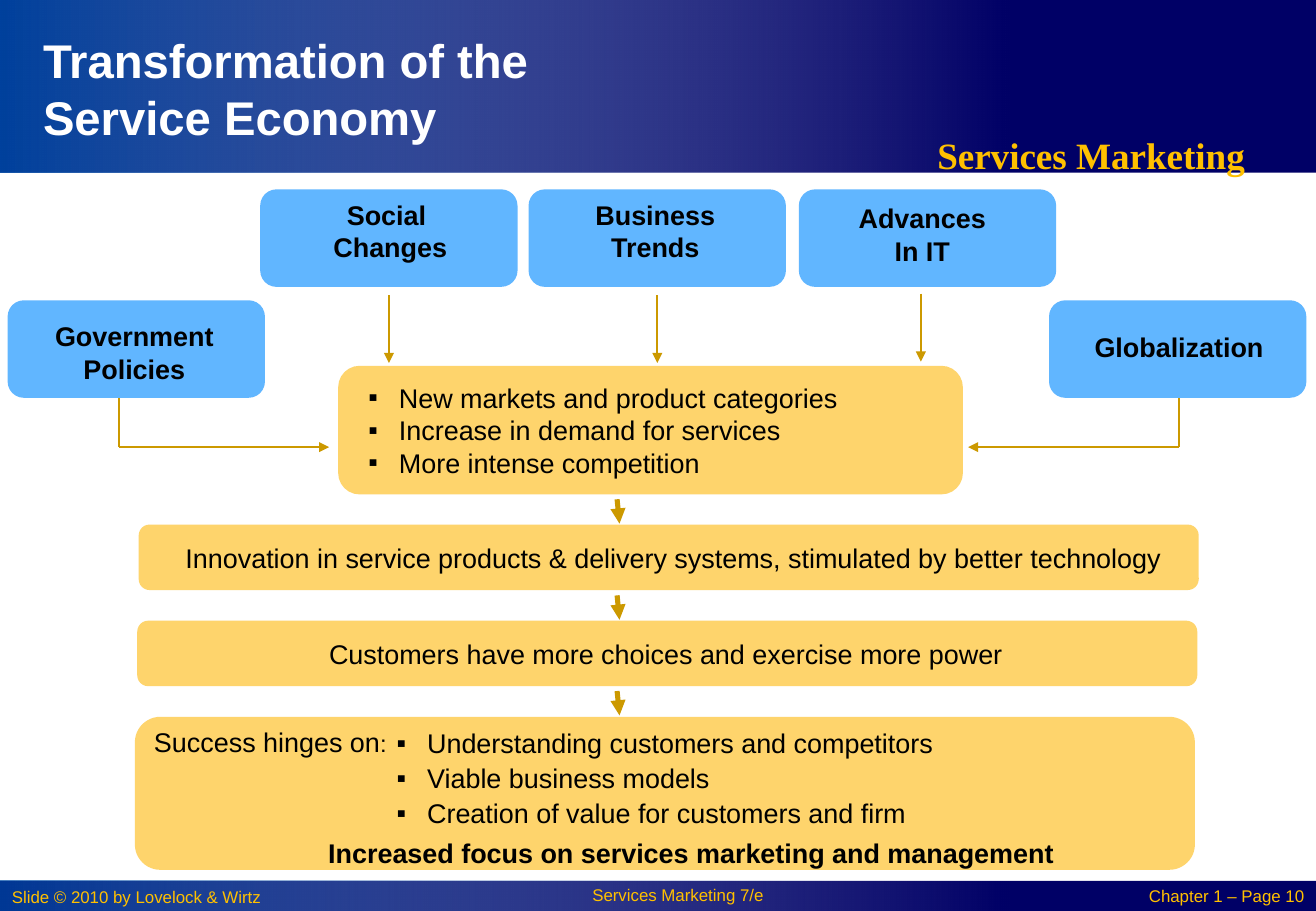
from lxml.etree import SubElement
from pptx import Presentation
from pptx.dml.color import RGBColor
from pptx.enum.shapes import MSO_CONNECTOR, MSO_SHAPE
from pptx.enum.text import MSO_ANCHOR, PP_ALIGN
from pptx.oxml.ns import qn
from pptx.util import Cm, Pt

# Content: lengths in centimetres
PAGE_WIDTH, PAGE_HEIGHT = 27.51, 19.05
COLORS = {
    "navy": "000066", "blue": "0152AB", "white": "FFFFFF", "gold": "FFC000",
    "sky": "61B6FF", "sand": "FED46C", "ochre": "CC9900", "black": "000000",
}
LEFT, CENTER, RIGHT = PP_ALIGN.LEFT, PP_ALIGN.CENTER, PP_ALIGN.RIGHT

# Bars: top, height, opacity of the gradient's start in percent
BARS = [(18.42, 0.63, 69), (0, 3.61, 80)]
GRADIENT_WIDTH = 21.17

# Driving forces: lines, left, top, text shift right, text shift down
CARD_WIDTH, CARD_HEIGHT = 5.38, 2.04
DRIVERS = [
    (["Government", "Policies"], 0.16, 6.28, -0.04, 0.07),
    (["Social ", "Changes"], 5.44, 3.96, 0.03, -0.15),
    (["Business", "Trends"], 11.05, 3.96, -0.04, -0.15),
    (["Advances", "In IT"], 16.7, 3.96, -0.11, -0.08),
    (["Globalization"], 21.93, 6.28, 0.03, -0.04),
]

# Results: left, top, width, height, text, text shift right
MARKETS_BOX = (7.07, 7.65, 13.06, 2.69)
MARKETS = ["New markets and product categories", "Increase in demand for services",
           "More intense competition"]
BANDS = [
    (2.9, 10.97, 22.16, 1.37, "Innovation in service products & delivery systems, "
                              "stimulated by better technology", 0.1),
    (2.87, 12.98, 22.16, 1.37, "Customers have more choices and exercise more power", -0.03),
]
SUCCESS_BOX = (2.82, 14.99, 22.16, 3.2)
SUCCESS = ["Understanding customers and competitors", "Viable business models",
           "Creation of value for customers and firm"]

# Free labels: runs as (text, size, bold); left, middle, width, align, color, font
LABELS = [
    ([[("Transformation of the", 28, True)], [("Service Economy", 28, True)]],
     0.9, 1.85, 17.5, LEFT, "white", "Arial"),
    ([[("Services Marketing", 22, True)]], 17.81, 3.24, 10, CENTER, "gold", "Times New Roman"),
    ([[("Slide © 2010 by Lovelock & Wirtz", 10, False)]],
     0.25, 18.75, 6.3, LEFT, "gold", "Arial"),
    ([[("Services Marketing 7/e", 10, False)]], 10.77, 18.72, 6.8, CENTER, "gold", "Arial"),
    ([[("Chapter 1 – Page 10", 10, False)]], 22.26, 18.74, 5, RIGHT, "gold", "Arial"),
    ([[("Success hinges on", 16, False), (":", 14, False)]],
     3.22, 15.51, 5, LEFT, "black", "Arial"),
    ([[("Increased focus on services marketing and management", 16, True)]],
     6.2, 17.83, 16.5, CENTER, "black", "Arial"),
]

# Connectors
THIN, THICK = 1.25, 3
SHORT_ARROW_TOPS = [10.44, 12.45, 14.45]
DROP_ARROWS = [(8.13, 6.17), (13.74, 6.17), (19.25, 6.14)]
ELBOWS = [(2.49, 6.88), (24.64, 20.24)]
ELBOW_TOP, ELBOW_BOTTOM = 8.33, 9.35

deck = Presentation()
deck.slide_width, deck.slide_height = Cm(PAGE_WIDTH), Cm(PAGE_HEIGHT)
page = deck.slides.add_slide(deck.slide_layouts[6])


def rgb(name):
    return RGBColor.from_string(COLORS[name])


def add_block(kind, left, top, width, height, color):
    block = page.shapes.add_shape(kind, Cm(left), Cm(top), Cm(width), Cm(height))
    block.shadow.inherit = False
    block.line.fill.background()
    block.fill.solid()
    block.fill.fore_color.rgb = rgb(color)
    return block


def write(box, paragraphs, align=CENTER, color="black", font="Arial",
          margins=(0, 0, 0, 0), bullet=False, gap=0):
    frame = box.text_frame
    frame.word_wrap = True
    frame.vertical_anchor = MSO_ANCHOR.MIDDLE
    frame.margin_left, frame.margin_top, frame.margin_right, frame.margin_bottom = map(Cm, margins)
    for index, runs in enumerate(paragraphs):
        para = frame.add_paragraph() if index else frame.paragraphs[0]
        para.alignment = align
        if index and gap:
            para.space_before = Pt(gap)
        if bullet:
            properties = para._p.get_or_add_pPr()
            properties.set("marL", str(Cm(0.64)))
            properties.set("indent", str(Cm(-0.64)))
            SubElement(properties, qn("a:buFont")).set("typeface", "Arial")
            SubElement(properties, qn("a:buChar")).set("char", "▪")
        for text, size, bold in runs:
            span = para.add_run()
            span.text = text
            span.font.size, span.font.bold = Pt(size), bold
            span.font.name, span.font.color.rgb = font, rgb(color)


def add_label(paragraphs, left, middle, width, align, color, font, **options):
    height = 1
    box = page.shapes.add_textbox(Cm(left), Cm(middle - height / 2), Cm(width), Cm(height))
    write(box, paragraphs, align, color, font, **options)


def plain(lines, bold=False):
    return [[(line, 16, bold)] for line in lines]


def shifted(right, down):
    base = 0.3
    return base + right, base + down, base - right, base - down


def add_line(start, end, weight, arrow=True):
    line = page.shapes.add_connector(MSO_CONNECTOR.STRAIGHT, *map(Cm, start + end))
    line.line.width = Pt(weight)
    line.line.color.rgb = rgb("ochre")
    if arrow:
        SubElement(line.line._get_or_add_ln(), qn("a:tailEnd")).set("type", "triangle")
    SubElement(line._element.spPr, qn("a:effectLst"))


# Header and footer bars with a gradient fading to the right
for top, height, opacity in BARS:
    add_block(MSO_SHAPE.RECTANGLE, 0, top, PAGE_WIDTH, height, "navy")
    glow = add_block(MSO_SHAPE.RECTANGLE, 0, top, GRADIENT_WIDTH, height, "blue")
    glow.fill.gradient()
    glow.fill.gradient_angle = 0
    for stop, color, alpha in zip(glow.fill.gradient_stops, ("blue", "white"), (opacity, 0)):
        stop.color.rgb = rgb(color)
        tint = stop._gs.find(qn("a:srgbClr"))
        SubElement(tint, qn("a:alpha")).set("val", str(alpha * 1000))

# Driving forces
for lines, left, top, right, down in DRIVERS:
    card = add_block(MSO_SHAPE.ROUNDED_RECTANGLE, left, top, CARD_WIDTH, CARD_HEIGHT, "sky")
    write(card, plain(lines, True), margins=shifted(right, down))

# Results
markets = add_block(MSO_SHAPE.ROUNDED_RECTANGLE, *MARKETS_BOX, "sand")
write(markets, plain(MARKETS), LEFT, margins=(0.5, 0, 0, 0), bullet=True)
for left, top, width, height, text, right in BANDS:
    band = add_block(MSO_SHAPE.ROUNDED_RECTANGLE, left, top, width, height, "sand")
    write(band, plain([text]), margins=shifted(right, 0))
add_block(MSO_SHAPE.ROUNDED_RECTANGLE, *SUCCESS_BOX, "sand")
add_label(plain(SUCCESS), 8.29, 16.27, 16.3, LEFT, "black", "Arial", bullet=True, gap=1.5)

# Title, header, footer and success labels
for label in LABELS:
    add_label(*label)

# Arrows
for top in SHORT_ARROW_TOPS:
    add_line((12.9, top), (12.95, top + 0.51), THICK)
for x, top in DROP_ARROWS:
    add_line((x, top), (x, top + 1.42), THIN)
for x, tip in ELBOWS:
    add_line((x, ELBOW_TOP), (x, ELBOW_BOTTOM), THIN, arrow=False)
    add_line((x, ELBOW_BOTTOM), (tip, ELBOW_BOTTOM), THIN)

deck.save("out.pptx")
